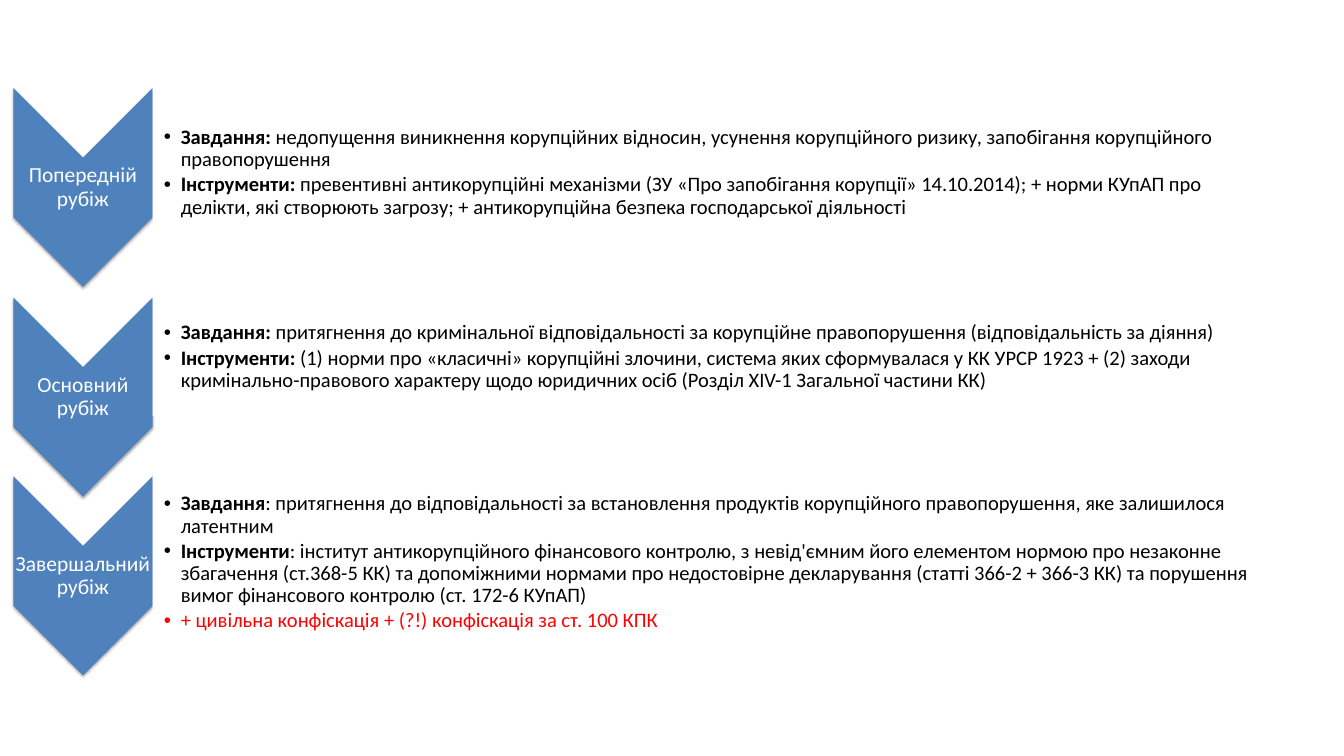
from lxml import etree
from pptx import Presentation
from pptx import util as u
from pptx.dml.color import RGBColor
from pptx.enum import shapes, text
from pptx.oxml.ns import qn

COLORS = {"chevron": "4F81BD", "panel": "FFFFFF", "label": "FFFFFF",
          "body": "000000", "accent": "FF0000", "shadow": "000000"}
FONT = "Calibri"
LEFT, CHEVRON_WIDTH, CHEVRON_HEIGHT = 0.2, 2.07, 2.96
PANEL_WIDTH = 16.73

STAGES = [
    (1.31, 2.52, "Попередній рубіж", [
        ("Завдання: ", "недопущення виникнення корупційних відносин, усунення корупційного ризику, "
         "запобігання корупційного правопорушення", "body"),
        ("Інструменти: ", "превентивні антикорупційні механізми (ЗУ «Про запобігання корупції» "
         "14.10.2014); + норми КУпАП про делікти, які створюють загрозу; + антикорупційна безпека "
         "господарської діяльності", "body")]),
    (4.43, 1.76, "Основний рубіж", [
        ("Завдання: ", "притягнення до кримінальної відповідальності за корупційне правопорушення "
         "(відповідальність за діяння)", "body"),
        ("Інструменти:", " (1) норми про «класичні» корупційні злочини, система яких сформувалася у "
         "КК УРСР 1923 + (2) заходи кримінально-правового характеру щодо юридичних осіб "
         "(Розділ XIV-1 Загальної частини КК)", "body")]),
    (7.09, 2.57, "Завершальний рубіж", [
        ("Завдання", ": притягнення до відповідальності за встановлення продуктів корупційного "
         "правопорушення, яке залишилося латентним", "body"),
        ("Інструменти", ": інститут антикорупційного фінансового контролю, з невід'ємним його "
         "елементом нормою про незаконне збагачення (ст.368-5 КК) та допоміжними нормами про "
         "недостовірне декларування (статті 366-2 + 366-3 КК) та порушення вимог фінансового "
         "контролю (ст. 172-6 КУпАП)", "body"),
        ("", "+ цивільна конфіскація + (?!) конфіскація за ст. 100 КПК", "accent")]),
]


def add_turned_shape(page, kind, left, top, width, height, color):
    shape = page.shapes.add_shape(
        kind, u.Inches(left + (width - height) / 2), u.Inches(top + (height - width) / 2),
        u.Inches(height), u.Inches(width))
    shape.rotation = 90
    shape.shadow.inherit = False
    shape.fill.solid()
    shape.fill.fore_color.rgb = RGBColor.from_string(COLORS[color])
    shape.line.fill.background()
    return shape


def add_shadow(shape):
    effects = shape._element.spPr.find(qn("a:effectLst"))
    shadow = etree.SubElement(effects, qn("a:outerShdw"), blurRad=str(u.Pt(3.1)),
                              dist=str(u.Pt(1.8)), dir="5400000", rotWithShape="0")
    color = etree.SubElement(shadow, qn("a:srgbClr"), val=COLORS["shadow"])
    etree.SubElement(color, qn("a:alpha"), val="35000")


def set_opacity(shape, percent):
    color = shape._element.spPr.find(qn("a:solidFill")).find(qn("a:srgbClr"))
    etree.SubElement(color, qn("a:alpha"), val=str(percent * 1000))


def add_bullet(para):
    properties = para._p.get_or_add_pPr()
    properties.set("marL", str(u.Inches(0.25)))
    properties.set("indent", str(u.Inches(-0.25)))
    etree.SubElement(properties, qn("a:buFont"), typeface="Arial")
    etree.SubElement(properties, qn("a:buChar"), char="•")


def add_text(page, left, top, width, height, entries, size, align, inset=0.02, bullets=False):
    box = page.shapes.add_textbox(u.Inches(left), u.Inches(top), u.Inches(width), u.Inches(height))
    frame = box.text_frame
    frame.word_wrap = True
    frame.vertical_anchor = text.MSO_ANCHOR.MIDDLE
    frame.margin_left = u.Inches(inset)
    frame.margin_top = frame.margin_right = frame.margin_bottom = u.Inches(0.02)
    for index, (lead, rest, color) in enumerate(entries):
        para = frame.add_paragraph() if index else frame.paragraphs[0]
        para.alignment = align
        para.line_spacing = 0.9
        if bullets:
            para.level = 1
            para.space_after = u.Pt(size * 0.15)
            add_bullet(para)
        for words, bold in ((lead, True), (rest, False)):
            if words:
                span = para.add_run()
                span.text = words
                span.font.name = FONT
                span.font.size = u.Pt(size)
                span.font.bold = bold
                span.font.color.rgb = RGBColor.from_string(COLORS[color])


def add_chevron(page, left, top, width, height, label):
    chevron = add_turned_shape(page, shapes.MSO_SHAPE.CHEVRON, left, top, width, height, "chevron")
    add_shadow(chevron)
    add_text(page, left, top + width / 2, width, height - width, [("", label, "label")],
             size=23, align=text.PP_ALIGN.CENTER)


def add_panel(page, left, top, width, height, entries):
    panel = add_turned_shape(page, shapes.MSO_SHAPE.ROUND_2_SAME_RECTANGLE,
                             left, top, width, height, "panel")
    set_opacity(panel, 90)
    inset = height * 0.05
    add_text(page, left, top + inset, width - inset, height - 2 * inset, entries,
             size=22, align=text.PP_ALIGN.LEFT, inset=0.17, bullets=True)


def main():
    deck = Presentation()
    deck.slide_width, deck.slide_height = u.Inches(20), u.Inches(11.25)
    page = deck.slides.add_slide(deck.slide_layouts[6])
    for top, panel_height, label, entries in STAGES:
        add_chevron(page, LEFT, top, CHEVRON_WIDTH, CHEVRON_HEIGHT, label)
        add_panel(page, LEFT + CHEVRON_WIDTH, top, PANEL_WIDTH, panel_height, entries)
    deck.save("out.pptx")


if __name__ == "__main__":
    main()
